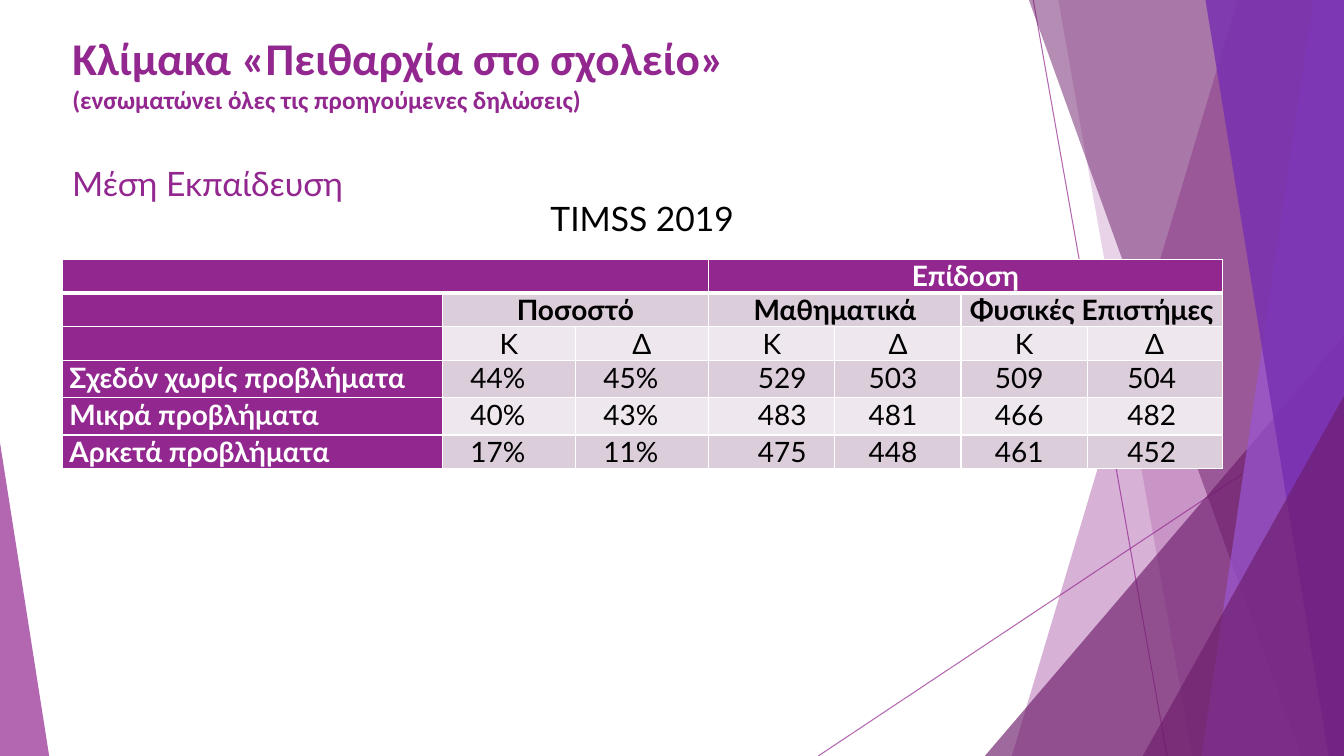
import dataclasses
import typing

import lxml.etree
import pptx
import pptx.dml.color
import pptx.enum.dml
import pptx.enum.shapes
import pptx.enum.text
import pptx.oxml.ns
import pptx.util

Cm = pptx.util.Cm
Pt = pptx.util.Pt
ALIGN = pptx.enum.text.PP_ALIGN

COLORS = {
    "purple": "92278F", "plum": "6D1D6B", "violet": "9B57D3", "indigo": "762EB1",
    "band": "DCCDDB", "pale": "EEE8EE", "white": "FFFFFF", "black": "000000",
}
WIDTH, HEIGHT = 33.87, 19.05
FONT = "Lato"
ROW_HEIGHTS = [0.85, 0.85, 0.85, 0.94, 0.94, 0.85]
ROW_FILLS = ["purple", "band", "pale", "band", "pale", "band"]
SIDE_MARGIN = 0.18


@dataclasses.dataclass
class Facet:
    """Panel from the top edge to the bottom edge, reaching the right side."""
    top_x: float
    bottom_x: float
    color: str
    opacity: int


@dataclasses.dataclass
class Corner:
    """Triangle standing on the bottom edge."""
    left: float
    width: float
    height: float
    apex: float
    color: str
    opacity: int


@dataclasses.dataclass
class Grid:
    left: float
    widths: list[float]
    rows: list[list[str]]
    spans: list[tuple[int, int, int]]  # row, first column, last column
    right_margins: list[float]  # for the figures, by column
    label_columns: int = 0
    right_aligned_column: int = -1


@dataclasses.dataclass
class Label:
    text: str
    left: float
    top: float
    width: float
    color: str
    align: ALIGN


RAYS = [(26.04, 0, 29.41, HEIGHT), (WIDTH, 10.24, 20.62, HEIGHT)]
DECOR = [
    Facet(31.19, 25.5, "purple", 36),
    Facet(26.67, 30.05, "purple", 20),
    Corner(24.82, 9.05, 10.59, 1, "plum", 66),
    Facet(25.93, 32.79, "plum", 50),
    Facet(33.1, 30.28, "violet", 70),
    Facet(30.38, 33.48, "indigo", 80),
    Corner(28.8, 5.07, 9.07, 1, "plum", 66),
    Corner(0, 1.24, 7.9, 0, "purple", 70),
]
GRIDS = [
    Grid(1.57, [9.58, 3.35, 3.35], [
        ["", "", ""],
        ["", "Ποσοστό", ""],
        ["", "Κ", "Δ"],
        ["Σχεδόν χωρίς προβλήματα", "44%", "45%"],
        ["Μικρά προβλήματα", "40%", "43%"],
        ["Αρκετά προβλήματα", "17%", "11%"],
    ], [(0, 0, 2), (1, 1, 2)], [SIDE_MARGIN, 0.73, 0.73], label_columns=1),
    Grid(17.86, [3.18, 3.18, 3.18, 3.4], [
        ["Επίδοση", "", "", ""],
        ["Μαθηματικά", "", "Φυσικές Επιστήμες", ""],
        ["Κ", "Δ", "Κ", "Δ"],
        ["529", "503", "509", "504"],
        ["483", "481", "466", "482"],
        ["475", "448", "461", "452"],
    ], [(0, 0, 3), (1, 0, 1), (1, 2, 3)], [0.71, 0.43, 0.43, 0.33],
        right_aligned_column=0),
]
LABELS = [
    Label("Μέση Εκπαίδευση", 1.57, 3.99, 17.48, "purple", ALIGN.LEFT),
    Label("TIMSS 2019", 3.84, 4.85, 24.69, "black", ALIGN.CENTER),
]


def rgb(name: str) -> pptx.dml.color.RGBColor:
    return pptx.dml.color.RGBColor.from_string(COLORS[name])


def add_element(parent: typing.Any, tag: str, **attributes: str) -> typing.Any:
    return lxml.etree.SubElement(parent, pptx.oxml.ns.qn(tag), attributes)


def set_opacity(element: typing.Any, percent: int) -> None:
    color = next(element.iter(pptx.oxml.ns.qn("a:srgbClr")))
    add_element(color, "a:alpha", val=str(percent * 1000))


def format_runs(paragraph: typing.Any, size: float, color: str,
                bold: bool = False, font: str = FONT) -> None:
    for run in paragraph.runs:
        run.font.name = font
        run.font.size = Pt(size)
        run.font.bold = bold
        run.font.color.rgb = rgb(color)


def draw_ray(slide: typing.Any, ends: tuple) -> None:
    ray = slide.shapes.add_connector(
        pptx.enum.shapes.MSO_CONNECTOR.STRAIGHT, *map(Cm, ends))
    ray.line.color.rgb = rgb("purple")
    ray.line.width = Pt(0.75)
    properties = ray._element.spPr
    set_opacity(properties, 70)
    add_element(properties, "a:effectLst")


def draw_decor(slide: typing.Any, item: Facet | Corner) -> None:
    if isinstance(item, Facet):
        builder = slide.shapes.build_freeform(Cm(item.top_x), 0)
        builder.add_line_segments([
            (Cm(WIDTH), 0), (Cm(WIDTH), Cm(HEIGHT)), (Cm(item.bottom_x), Cm(HEIGHT))])
        shape = builder.convert_to_shape()
    else:
        shape = slide.shapes.add_shape(
            pptx.enum.shapes.MSO_SHAPE.ISOSCELES_TRIANGLE, Cm(item.left),
            Cm(HEIGHT - item.height), Cm(item.width), Cm(item.height))
        shape.adjustments[0] = item.apex
    shape.shadow.inherit = False
    shape.line.fill.background()
    shape.fill.solid()
    shape.fill.fore_color.rgb = rgb(item.color)
    set_opacity(shape._element.spPr, item.opacity)


def set_borders(cell: typing.Any, row: int) -> None:
    properties = cell._tc.get_or_add_tcPr()
    widths = {"L": 1, "R": 1, "T": 3 if row == 1 else 1, "B": 3 if row == 0 else 1}
    for side, width in widths.items():
        line = add_element(properties, f"a:ln{side}", w=str(Pt(width)))
        fill = add_element(line, "a:solidFill")
        add_element(fill, "a:srgbClr", val=COLORS["white"])


def draw_grid(slide: typing.Any, grid: Grid) -> None:
    table = slide.shapes.add_table(
        len(grid.rows), len(grid.widths), Cm(grid.left), Cm(6.53),
        Cm(sum(grid.widths)), Cm(sum(ROW_HEIGHTS))).table
    for column, width in zip(table.columns, grid.widths):
        column.width = Cm(width)
    for row, height in zip(table.rows, ROW_HEIGHTS):
        row.height = Cm(height)
    for row, texts in enumerate(grid.rows):
        for column, text in enumerate(texts):
            is_label = column < grid.label_columns
            is_figure = row > 2 and not is_label
            cell = table.cell(row, column)
            set_borders(cell, row)
            cell.fill.solid()
            cell.fill.fore_color.rgb = rgb("purple" if is_label else ROW_FILLS[row])
            cell.margin_top = cell.margin_bottom = 0
            cell.margin_left = Cm(SIDE_MARGIN)
            cell.margin_right = Cm(grid.right_margins[column] if is_figure else SIDE_MARGIN)
            cell.text_frame.text = text
            paragraph = cell.text_frame.paragraphs[0]
            paragraph.alignment = ALIGN.LEFT if is_label else ALIGN.CENTER
            if is_figure and column == grid.right_aligned_column:
                paragraph.alignment = ALIGN.RIGHT
            color = "white" if is_label or row == 0 else "black"
            format_runs(paragraph, 20, color, bold=is_label or row < 2)
    for row, first, last in grid.spans:
        table.cell(row, first).merge(table.cell(row, last))


def draw_label(slide: typing.Any, label: Label) -> None:
    box = slide.shapes.add_textbox(Cm(label.left), Cm(label.top), Cm(label.width), Cm(1.28))
    box.text_frame.word_wrap = True
    box.text_frame.text = label.text
    paragraph = box.text_frame.paragraphs[0]
    paragraph.alignment = label.align
    format_runs(paragraph, 24, label.color)


def fill_title(title: typing.Any) -> None:
    title.left, title.top, title.width, title.height = map(Cm, (1.57, 0.64, 28.24, 2.36))
    frame = title.text_frame
    frame.text = "Κλίμακα «Πειθαρχία στο σχολείο»\v(ενσωματώνει όλες τις προηγούμενες δηλώσεις)"
    frame.auto_size = pptx.enum.text.MSO_AUTO_SIZE.NONE
    frame.vertical_anchor = pptx.enum.text.MSO_ANCHOR.MIDDLE
    paragraph = frame.paragraphs[0]
    paragraph.alignment = ALIGN.LEFT
    format_runs(paragraph, 32.4, "purple", bold=True, font="Calibri")
    paragraph.runs[1].font.size = Pt(18)


def main() -> None:
    presentation = pptx.Presentation()
    presentation.slide_width, presentation.slide_height = Cm(WIDTH), Cm(HEIGHT)
    slide = presentation.slides.add_slide(presentation.slide_layouts[5])
    # Background decoration
    for ends in RAYS:
        draw_ray(slide, ends)
    for item in DECOR:
        draw_decor(slide, item)
    # Title, captions and the two halves of the table
    fill_title(slide.shapes.title)
    for label in LABELS:
        draw_label(slide, label)
    for grid in GRIDS:
        draw_grid(slide, grid)
    presentation.save("out.pptx")


if __name__ == "__main__":
    main()
